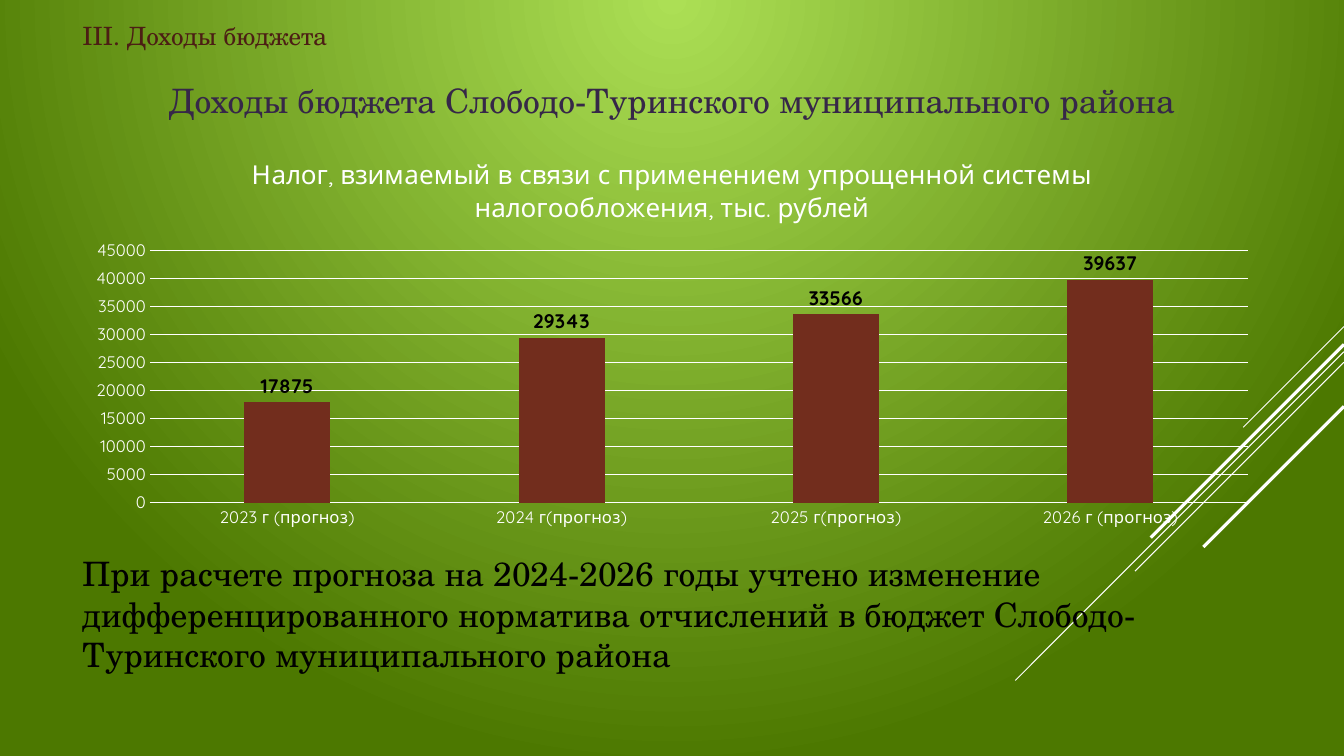
from dataclasses import dataclass

from lxml.etree import SubElement
from pptx import Presentation
from pptx.chart.chart import Chart
from pptx.chart.data import CategoryChartData
from pptx.dml.color import RGBColor
from pptx.enum.chart import XL_CHART_TYPE as ChartType
from pptx.enum.chart import XL_LABEL_POSITION as LabelPosition
from pptx.enum.chart import XL_TICK_MARK as TickMark
from pptx.enum.shapes import MSO_CONNECTOR as Connector
from pptx.enum.text import MSO_ANCHOR as Anchor
from pptx.enum.text import MSO_AUTO_SIZE as AutoSize
from pptx.enum.text import PP_ALIGN as Align
from pptx.oxml.ns import qn
from pptx.shapes.autoshape import Shape
from pptx.slide import Slide
from pptx.text.text import Font
from pptx.util import Emu, Pt

SLIDE_WIDTH, SLIDE_HEIGHT = 1280, 720
LEFT, WIDTH = 69, 1142


@dataclass(frozen=True)
class Theme:
    glow: str = "ACDF55"
    edge: str = "4C7800"
    light: str = "FFFFFF"
    dark: str = "000000"
    section: str = "4C1E14"
    heading: str = "362748"
    bar: str = "722D1D"
    text_face: str = "TeX Gyre Schola"
    chart_face: str = "Quicksand"
    section_size: float = 18
    text_size: float = 24
    chart_title_size: float = 18.6
    axis_size: float = 11.9
    label_size: float = 14
    thin: float = 0.75
    thick: float = 2.25


@dataclass(frozen=True)
class TextBlock:
    text: str
    top: int
    height: int
    size: float
    color: str
    anchor: Anchor = Anchor.MIDDLE
    align: Align = Align.LEFT


@dataclass(frozen=True)
class Ray:
    """A 45° line running down and left from the right edge of the slide."""
    top: int
    run: int
    weight: float


THEME = Theme()

SECTION = TextBlock("III. Доходы бюджета", 18, 32, THEME.section_size, THEME.section)
HEADING = TextBlock("Доходы бюджета Слободо-Туринского муниципального района",
                    71, 48, THEME.text_size, THEME.heading, Anchor.TOP, Align.CENTER)
NOTE = TextBlock("При расчете прогноза на 2024-2026 годы учтено изменение "
                 "дифференцированного норматива отчислений в бюджет "
                 "Слободо-Туринского муниципального района",
                 520, 129, THEME.text_size, THEME.dark)

RAYS = [
    Ray(311, 96, THEME.thin),
    Ray(335, 313, THEME.thin),
    Ray(345, 199, THEME.thin),
    Ray(328, 184, THEME.thick),
    Ray(387, 134, THEME.thick),
]

TAX = ("Налог, взимаемый в связи с применением упрощенной системы "
       "налогообложения, тыс. рублей")
REVENUE = {
    "2023 г (прогноз)": 17875,
    "2024 г(прогноз)": 29343,
    "2025 г(прогноз)": 33566,
    "2026 г (прогноз)": 39637,
}


def px(length: int) -> Emu:
    return Emu(length * 9525)


def rgb(color: str) -> RGBColor:
    return RGBColor.from_string(color)


def style_font(font: Font, face: str, size: float, color: str, bold: bool = False) -> None:
    font.name, font.size, font.bold = face, Pt(size), bold
    font.color.rgb = rgb(color)


def paint_background(slide: Slide) -> None:
    """Fill with a circular gradient that glows from the top centre."""
    fill = slide.background.fill
    fill.gradient()
    for stop, color, position in zip(fill.gradient_stops, (THEME.glow, THEME.edge), (0, 1)):
        stop.color.rgb = rgb(color)
        stop.position = position
    gradient = slide.background._cSld.find(f".//{qn('a:gradFill')}")
    gradient.remove(gradient.find(qn("a:lin")))
    circle = SubElement(gradient, qn("a:path"), {"path": "circle"})
    SubElement(circle, qn("a:fillToRect"), {"l": "50000", "t": "0", "r": "50000", "b": "100000"})


def draw_ray(slide: Slide, ray: Ray) -> None:
    line = slide.shapes.add_connector(
        Connector.STRAIGHT, px(SLIDE_WIDTH), px(ray.top),
        px(SLIDE_WIDTH - ray.run), px(ray.top + ray.run))
    line.line.color.rgb = rgb(THEME.light)
    line.line.width = Pt(ray.weight)
    SubElement(line._element.spPr, qn("a:effectLst"))


def write_block(shape: Shape, block: TextBlock) -> None:
    shape.left, shape.top = px(LEFT), px(block.top)
    shape.width, shape.height = px(WIDTH), px(block.height)
    frame = shape.text_frame
    frame.text = block.text
    frame.word_wrap = True
    frame.auto_size = AutoSize.NONE
    frame.vertical_anchor = block.anchor
    paragraph = frame.paragraphs[0]
    paragraph.alignment = block.align
    style_font(paragraph.runs[0].font, THEME.text_face, block.size, block.color)


def add_block(slide: Slide, block: TextBlock) -> None:
    box = slide.shapes.add_textbox(px(LEFT), px(block.top), px(WIDTH), px(block.height))
    write_block(box, block)


def style_axes(chart: Chart) -> None:
    for axis in (chart.category_axis, chart.value_axis):
        axis.major_tick_mark = axis.minor_tick_mark = TickMark.NONE
        style_font(axis.tick_labels.font, THEME.chart_face, THEME.axis_size, THEME.light)
    chart.value_axis.format.line.fill.background()
    chart.value_axis.minimum_scale = 0
    chart.value_axis.maximum_scale = 45000
    chart.value_axis.major_unit = 5000
    for rule in (chart.category_axis.format.line, chart.value_axis.major_gridlines.format.line):
        rule.color.rgb = rgb(THEME.light)
        rule.width = Pt(THEME.thin)


def add_revenue_chart(slide: Slide) -> None:
    data = CategoryChartData()
    data.categories = list(REVENUE)
    data.add_series(TAX, list(REVENUE.values()))
    chart = slide.shapes.add_chart(ChartType.COLUMN_CLUSTERED, px(LEFT), px(131),
                                   px(WIDTH), px(379), data).chart
    style_font(chart.font, THEME.chart_face, 10, THEME.light)
    chart.has_legend = False
    chart.has_title = True
    title = chart.chart_title
    title.include_in_layout = False
    title.text_frame.text = TAX
    style_font(title.text_frame.paragraphs[0].runs[0].font,
               THEME.chart_face, THEME.chart_title_size, THEME.light)
    style_axes(chart)

    plot = chart.plots[0]
    plot.gap_width, plot.overlap = 219, -27
    plot.vary_by_categories = False
    bars = plot.series[0]
    bars.format.fill.solid()
    bars.format.fill.fore_color.rgb = rgb(THEME.bar)
    labels = bars.data_labels
    labels.show_value = True
    labels.position = LabelPosition.OUTSIDE_END
    style_font(labels.font, THEME.chart_face, THEME.label_size, THEME.dark, bold=True)


def main() -> None:
    deck = Presentation()
    deck.slide_width, deck.slide_height = px(SLIDE_WIDTH), px(SLIDE_HEIGHT)
    slide = deck.slides.add_slide(deck.slide_layouts.get_by_name("Title Only"))
    paint_background(slide)
    for ray in RAYS:
        draw_ray(slide, ray)
    add_revenue_chart(slide)
    write_block(slide.shapes.title, HEADING)
    for block in (SECTION, NOTE):
        add_block(slide, block)
    deck.save("out.pptx")


if __name__ == "__main__":
    main()
